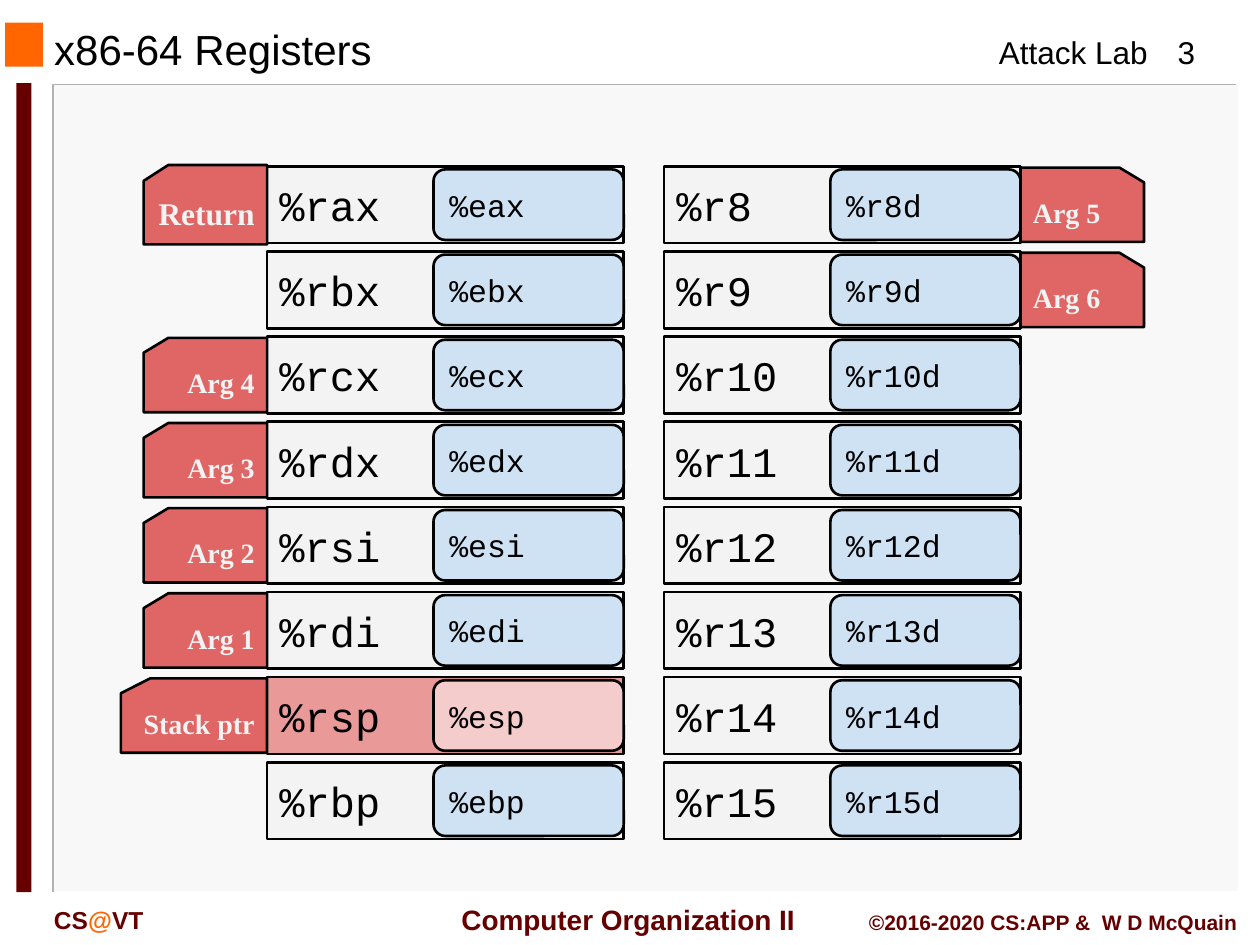
from pptx import Presentation
from pptx.dml.color import RGBColor
from pptx.enum.shapes import MSO_SHAPE
from pptx.enum.text import MSO_ANCHOR, PP_ALIGN
from pptx.util import Inches, Pt

RECTANGLE = MSO_SHAPE.RECTANGLE
ROUNDED = MSO_SHAPE.ROUNDED_RECTANGLE
CARD = MSO_SHAPE.FLOWCHART_CARD
LEFT, CENTER, RIGHT = PP_ALIGN.LEFT, PP_ALIGN.CENTER, PP_ALIGN.RIGHT
TOP, MIDDLE = MSO_ANCHOR.TOP, MSO_ANCHOR.MIDDLE

BLACK = RGBColor(0x00, 0x00, 0x00)
WHITE = RGBColor(0xFF, 0xFF, 0xFF)
PANEL = RGBColor(0xF8, 0xF8, 0xF8)
EDGE_GRAY = RGBColor(0xB2, 0xB2, 0xB2)
ORANGE = RGBColor(0xFF, 0x66, 0x00)
MAROON = RGBColor(0x66, 0x00, 0x00)
LIGHT_GRAY = RGBColor(0xF3, 0xF3, 0xF3)
LIGHT_BLUE = RGBColor(0xCF, 0xE2, 0xF3)
RED = RGBColor(0xE0, 0x66, 0x66)
ROSE = RGBColor(0xEA, 0x99, 0x99)
PINK = RGBColor(0xF4, 0xCC, 0xCC)

# Register grid, in inches
FIRST_TOP, LAST_TOP = 1.32, 6.05
COLUMN_LEFTS = (2.12, 5.27)
CELL_WIDTH, CELL_HEIGHT = 2.83, 0.61
HALF_WIDTH, HALF_HEIGHT = 1.51, 0.56
TAG_WIDTH, TAG_HEIGHT = 0.98, 0.59

REGISTERS = (
    ("rax", "rbx", "rcx", "rdx", "rsi", "rdi", "rsp", "rbp"),
    tuple(f"r{number}" for number in range(8, 16)),
)
PITCH = (LAST_TOP - FIRST_TOP) / (len(REGISTERS[0]) - 1)
STACK_POINTER = "rsp"
TAGS = {
    "rax": "Return", "rcx": "Arg 4", "rdx": "Arg 3", "rsi": "Arg 2",
    "rdi": "Arg 1", "rsp": "Stack ptr", "r8": "Arg 5", "r9": "Arg 6",
}
# Tags that differ from the usual width, height and text size
TAG_FORMATS = {"rax": (TAG_WIDTH, 0.63, 18), "rsp": (1.16, TAG_HEIGHT, 16)}

REGISTER_FONT = {"name": "Courier New", "size": Pt(24)}
HALF_FONT = {"name": "Courier New", "size": Pt(18)}
HEADER_FONT = {"name": "Arial", "size": Pt(18)}


def write_text(shape, runs, font, align=LEFT, anchor=MIDDLE, inset=0.1, wrap=True):
    """Fill the shape with one paragraph of (text, colour) runs."""
    frame = shape.text_frame
    frame_format = {
        "word_wrap": wrap, "vertical_anchor": anchor,
        "margin_left": Inches(0.1), "margin_right": Inches(0.1),
        "margin_top": Inches(inset), "margin_bottom": Inches(inset),
    }
    for name, value in frame_format.items():
        setattr(frame, name, value)
    paragraph = frame.paragraphs[0]
    paragraph.alignment = align
    for text, color in runs:
        run = paragraph.add_run()
        run.text = text
        run.font.color.rgb = color
        for name, value in font.items():
            setattr(run.font, name, value)


def add_box(slide, kind, box, fill, outlined=True):
    shape = slide.shapes.add_shape(kind, *map(Inches, box))
    shape.shadow.inherit = False
    shape.fill.solid()
    shape.fill.fore_color.rgb = fill
    if outlined:
        shape.line.color.rgb = BLACK
        shape.line.width = Pt(1.5)
    else:
        shape.line.fill.background()
    return shape


def add_edge(slide, points, color):
    """Draw an open line through the points."""
    start, *rest = [(Inches(x), Inches(y)) for x, y in points]
    builder = slide.shapes.build_freeform(*start)
    builder.add_line_segments(rest, close=False)
    edge = builder.convert_to_shape()
    edge.shadow.inherit = False
    edge.fill.background()
    edge.line.color.rgb = color
    edge.line.width = Pt(1)


def add_label(slide, box, runs, font, **text_format):
    label = slide.shapes.add_textbox(*map(Inches, box))
    write_text(label, runs, font, inset=0.05, **text_format)


def add_frame(slide):
    # Content panel with its bevelled edges
    add_box(slide, RECTANGLE, (0.43, 0.67, 9.4, 6.41), PANEL, outlined=False)
    add_edge(slide, ((9.81, 0.67), (0.42, 0.67), (0.42, 7.08)), EDGE_GRAY)
    add_edge(slide, ((9.83, 0.67), (9.83, 7.08), (0.44, 7.08)), WHITE)
    # Corner square and side bar
    add_box(slide, RECTANGLE, (0.04, 0.18, 0.3, 0.35), ORANGE, outlined=False)
    add_box(slide, RECTANGLE, (0.13, 0.66, 0.12, 6.42), MAROON, outlined=False)


def add_header_and_footer(slide):
    title = slide.shapes.title
    title_box = {"left": 0.33, "top": 0.08, "width": 8.3, "height": 0.61}
    for name, value in title_box.items():
        setattr(title, name, Inches(value))
    write_text(title, [("x86-64 Registers", BLACK)], {"name": "Arial", "size": Pt(24)})

    add_label(slide, (7.83, 0.21, 1.4, 0.4), [("Attack Lab", BLACK)],
              HEADER_FONT, anchor=TOP, wrap=False)
    add_label(slide, (9.08, 0.21, 0.67, 0.4), [("3", BLACK)],
              HEADER_FONT, align=CENTER, anchor=TOP)

    footers = (
        ((3.48, 7.11, 2.95, 0.37), [(" Computer Organization II", MAROON)],
         16, CENTER, MIDDLE, False),
        ((0.33, 7.13, 1.5, 0.33), [("CS", MAROON), ("@", ORANGE), ("VT", MAROON)],
         14, LEFT, TOP, True),
        ((6.67, 7.17, 3.25, 0.3), [("©2016-2020 CS:APP &  W D McQuain", MAROON)],
         12, RIGHT, TOP, True),
    )
    for box, runs, size, align, anchor, wrap in footers:
        font = {"name": "Arial", "size": Pt(size), "bold": True}
        add_label(slide, box, runs, font, align=align, anchor=anchor, wrap=wrap)


def add_register(slide, name, column, row):
    """Draw a 64-bit register with its 32-bit lower half inside."""
    left, top = COLUMN_LEFTS[column], FIRST_TOP + row * PITCH
    is_stack = name == STACK_POINTER
    cell = add_box(slide, RECTANGLE, (left, top, CELL_WIDTH, CELL_HEIGHT),
                   ROSE if is_stack else LIGHT_GRAY)
    write_text(cell, [(f"%{name}", BLACK)], REGISTER_FONT)

    half_box = (left + CELL_WIDTH - HALF_WIDTH,
                top + (CELL_HEIGHT - HALF_HEIGHT) / 2, HALF_WIDTH, HALF_HEIGHT)
    half = add_box(slide, ROUNDED, half_box, PINK if is_stack else LIGHT_BLUE)
    half_name = f"{name}d" if column else f"e{name[1:]}"
    write_text(half, [(f"%{half_name}", BLACK)], HALF_FONT)


def add_tag(slide, name, column, row):
    """Draw the role tag on the outer side of a register."""
    width, height, size = TAG_FORMATS.get(name, (TAG_WIDTH, TAG_HEIGHT, 16))
    left = COLUMN_LEFTS[column] + (CELL_WIDTH if column else -width)
    top = FIRST_TOP + row * PITCH + (CELL_HEIGHT - height) / 2
    tag = add_box(slide, CARD, (left, top, width, height), RED)
    if column:
        tag._element.spPr.xfrm.set("flipH", "1")
    font = {"name": "Times New Roman", "size": Pt(size), "bold": True}
    write_text(tag, [(TAGS[name], LIGHT_GRAY)], font, align=LEFT if column else RIGHT)


def main():
    presentation = Presentation()
    presentation.slide_width = Inches(10)
    presentation.slide_height = Inches(7.5)
    slide = presentation.slides.add_slide(presentation.slide_layouts[5])

    add_frame(slide)
    add_header_and_footer(slide)
    for column, names in enumerate(REGISTERS):
        for row, name in enumerate(names):
            add_register(slide, name, column, row)
            if name in TAGS:
                add_tag(slide, name, column, row)

    presentation.save("out.pptx")


if __name__ == "__main__":
    main()
